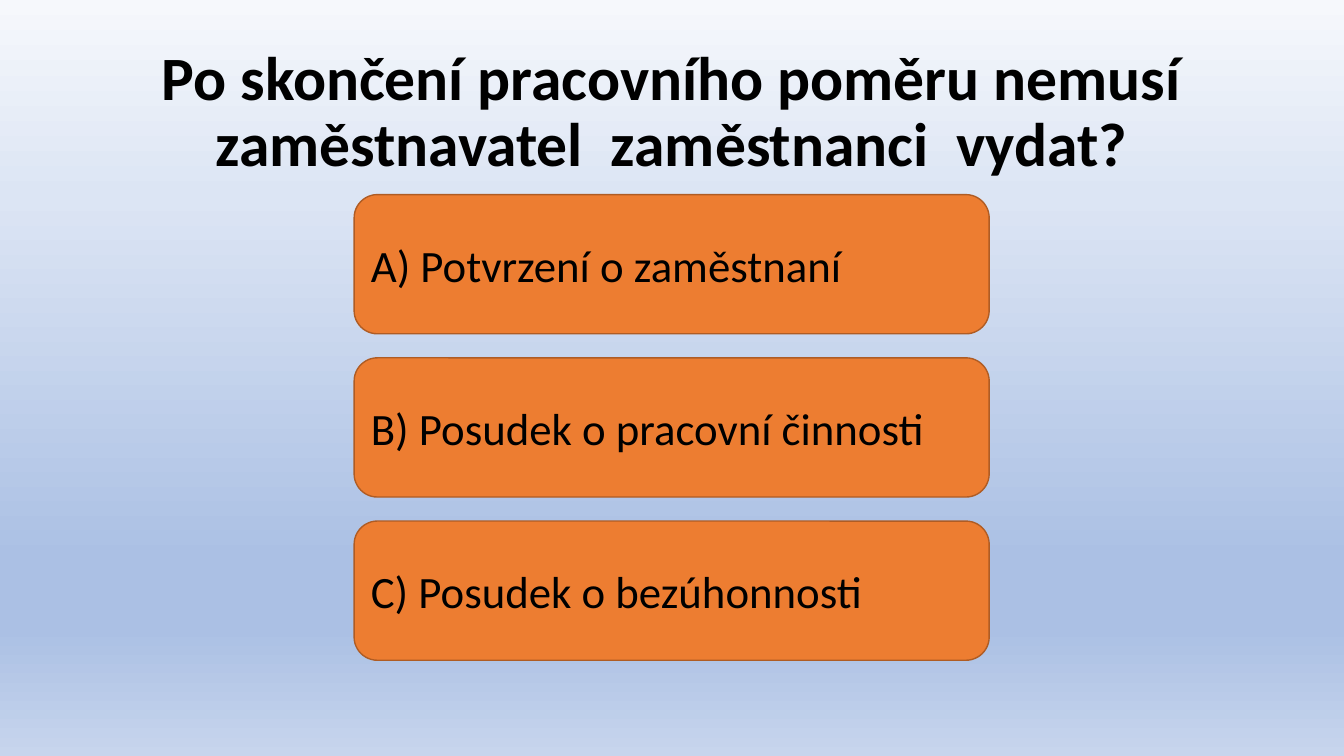
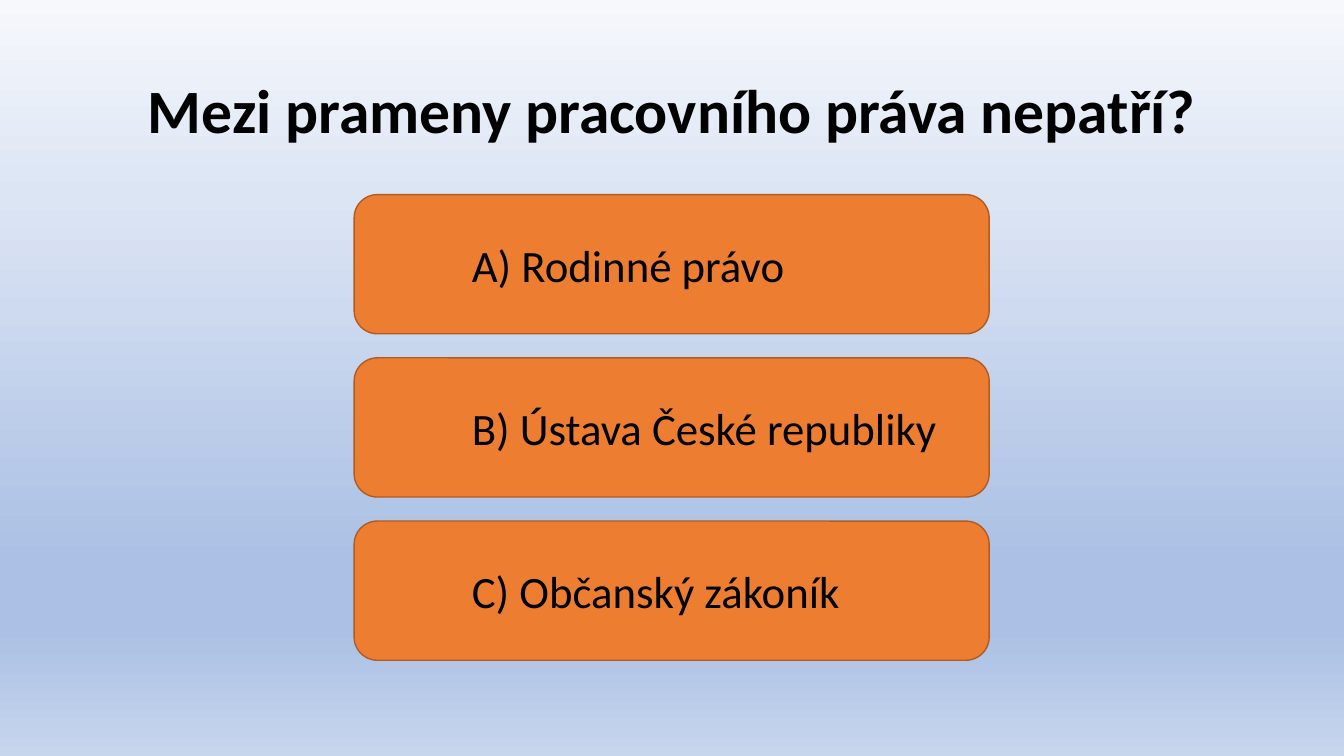
from lxml import etree
from pptx import Presentation
from pptx.dml.color import RGBColor
from pptx.enum.shapes import MSO_SHAPE
from pptx.enum.text import MSO_ANCHOR, MSO_AUTO_SIZE, PP_ALIGN
from pptx.oxml.ns import qn
from pptx.util import Pt

ROUNDED = MSO_SHAPE.ROUNDED_RECTANGLE
MIDDLE = MSO_ANCHOR.MIDDLE
NO_AUTOFIT = MSO_AUTO_SIZE.NONE
LEFT, CENTER = PP_ALIGN.LEFT, PP_ALIGN.CENTER

FONT = "Calibri"
BLACK, ORANGE, RUST = "000000", "ED7D31", "AF5C24"
SKY = [(0, "F6F8FC"), (26, "DCE5F4"), (74, "ABC0E4"), (83, "ABC0E4"), (100, "C7D5ED")]
TITLE_ONLY = 5

QUESTION_BOX = (66, 29, 828, 104.4)
ANSWERS_BOX = (253, 139, 453.6, 332.6)
ANSWER_GAP = 17.2

QUIZ = [
    {
        "question": "Po skončení pracovního poměru nemusí zaměstnavatel  zaměstnanci  vydat?",
        "answers": [
            "A) Potvrzení o zaměstnaní",
            "B) Posudek o pracovní činnosti",
            "C) Posudek o bezúhonnosti",
        ],
        "indent": 0,
    },
    {
        "question": "Mezi prameny pracovního práva nepatří?",
        "answers": [
            "A) Rodinné právo",
            "B) Ústava České republiky",
            "C) Občanský zákoník",
        ],
        "indent": 72,
    },
]


def color(value):
    return RGBColor.from_string(value)


def write(frame, text, size, bold=False, align=LEFT, spacing=1.0, indent=0):
    frame.word_wrap = True
    frame.auto_size = NO_AUTOFIT
    frame.vertical_anchor = MIDDLE
    frame.margin_left = Pt(7.2 + indent)
    paragraph = frame.paragraphs[0]
    paragraph.alignment = align
    paragraph.line_spacing = spacing
    run = paragraph.add_run()
    run.text = text
    run.font.name = FONT
    run.font.size = Pt(size)
    run.font.bold = bold
    run.font.color.rgb = color(BLACK)


def paint_sky(master):
    fill = master.background.fill
    fill.gradient()
    fill.gradient_angle = 270
    stops = master.element.xpath(".//p:bg//a:gsLst")[0]
    for stop in list(stops):
        stops.remove(stop)
    for percent, shade in SKY:
        stop = etree.SubElement(stops, qn("a:gs"), pos=str(percent * 1000))
        etree.SubElement(stop, qn("a:srgbClr"), val=shade)


def place_question(slide, box, question):
    title = slide.shapes.title
    title.left, title.top, title.width, title.height = map(Pt, box)
    write(title.text_frame, question, 44, bold=True, align=CENTER, spacing=0.9)


def place_answers(slide, box, answers, indent):
    left, top, width, height = box
    answer_height = (height - ANSWER_GAP * (len(answers) - 1)) / len(answers)
    for row, answer in enumerate(answers):
        answer_top = top + row * (answer_height + ANSWER_GAP)
        button = slide.shapes.add_shape(
            ROUNDED, Pt(left), Pt(answer_top), Pt(width), Pt(answer_height)
        )
        button.shadow.inherit = False
        button.fill.solid()
        button.fill.fore_color.rgb = color(ORANGE)
        button.line.color.rgb = color(RUST)
        button.line.width = Pt(1)
        write(button.text_frame, answer, 32, indent=indent)


def add_quiz_slide(deck, question, answers, indent):
    slide = deck.slides.add_slide(deck.slide_layouts[TITLE_ONLY])
    place_question(slide, QUESTION_BOX, question)
    place_answers(slide, ANSWERS_BOX, answers, indent)


def main():
    deck = Presentation()
    deck.slide_width, deck.slide_height = Pt(960), Pt(540)
    paint_sky(deck.slide_master)
    for item in QUIZ:
        add_quiz_slide(deck, **item)
    deck.save("out.pptx")


if __name__ == "__main__":
    main()
